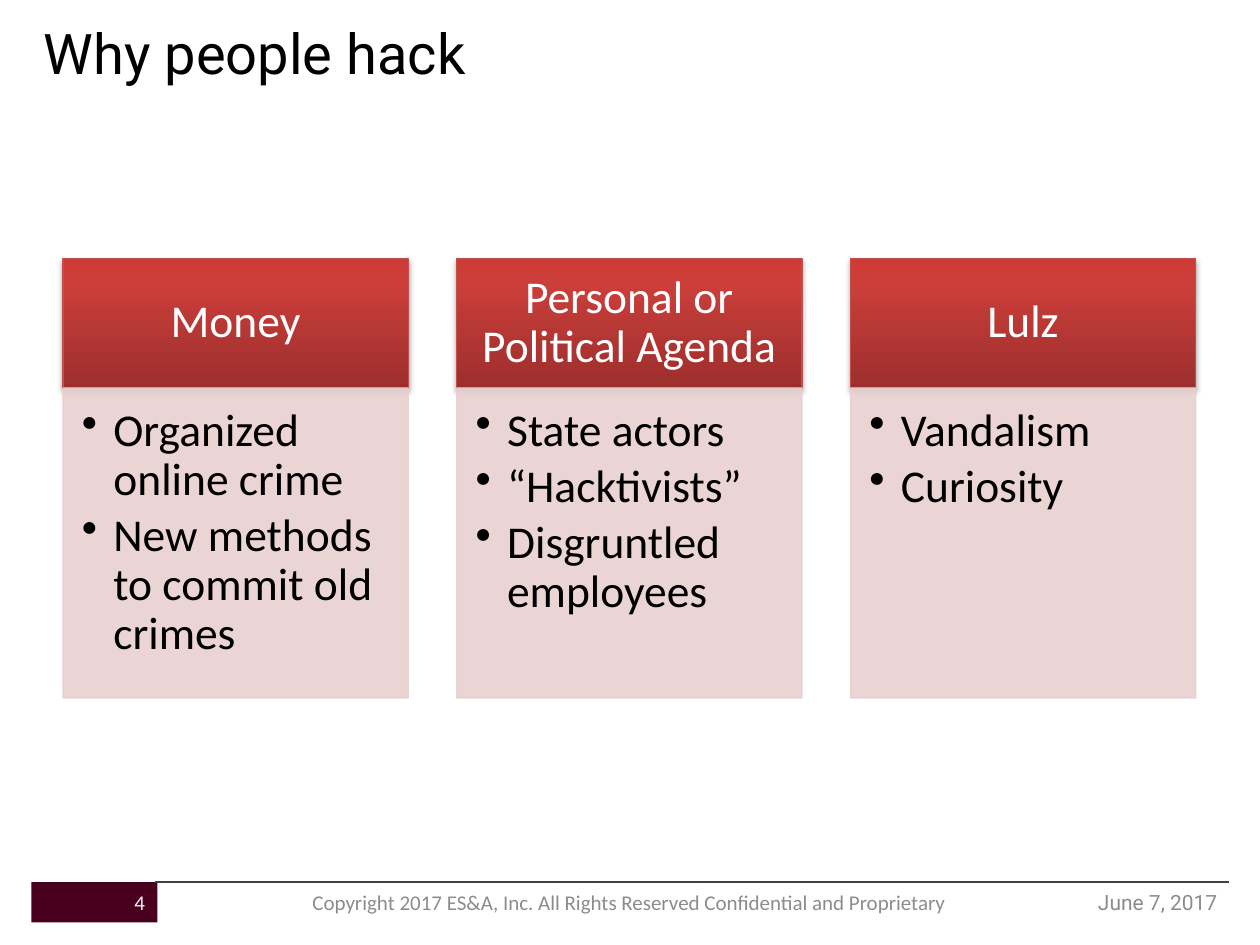
from dataclasses import dataclass
from typing import NamedTuple

from lxml.etree import SubElement
from pptx import Presentation
from pptx.dml.color import RGBColor
from pptx.enum.shapes import MSO_CONNECTOR, MSO_SHAPE
from pptx.enum.text import MSO_ANCHOR, PP_ALIGN
from pptx.oxml import parse_xml
from pptx.oxml.ns import nsdecls, qn
from pptx.util import Inches, Pt


@dataclass(frozen=True)
class Theme:
    heading_font: str = "Roboto"
    body_font: str = "Calibri"
    title_size: float = 32
    card_size: float = 26
    footer_size: float = 12
    black: str = "000000"
    white: str = "FFFFFF"
    grey: str = "8C8C8C"
    page_number: str = "F2F2F2"
    badge: str = "49001E"
    rule: str = "404040"
    header_edge: str = "C0504D"
    header_stops: tuple = ((0, "9C2F2D"), (80, "CB3E3A"), (100, "CE3B37"))
    panel: str = "E8D0D0"


class Box(NamedTuple):
    left: float
    top: float
    width: float
    height: float

    def lengths(self) -> list:
        return [Inches(value) for value in self]


class Motive(NamedTuple):
    heading: str
    examples: tuple


class Label(NamedTuple):
    text: str
    box: Box
    font: str
    size: float
    color: str
    align: PP_ALIGN
    anchor: MSO_ANCHOR


THEME = Theme()
SLIDE_WIDTH, SLIDE_HEIGHT = 10, 7.5

# Card grid
GRID_LEFT, GRID_TOP = 0.5, 2.05
CARD_WIDTH, COLUMN_STEP = 2.74, 3.125
HEADER_HEIGHT, PANEL_HEIGHT = 1.03, 2.46
HEADER_INSETS = (0.2, 0.12, 0.2, 0.12)
PANEL_INSETS = (0.15, 0.15, 0.2, 0.23)

# Footer band
FOOTER_TOP, FOOTER_HEIGHT = 7, 0.32
BADGE = Box(0.25, FOOTER_TOP, 1, FOOTER_HEIGHT)

MOTIVES = (
    Motive("Money", ("Organized online crime", "New methods to commit old crimes")),
    Motive("Personal or Political Agenda",
           ("State actors", "“Hacktivists”", "Disgruntled employees")),
    Motive("Lulz", ("Vandalism", "Curiosity")),
)
LABELS = (
    Label("Why people hack", Box(0.25, 0.1, 8, 1.2), THEME.heading_font,
          THEME.title_size, THEME.black, PP_ALIGN.LEFT, MSO_ANCHOR.TOP),
    Label("June 7, 2017", Box(7.67, FOOTER_TOP, 2.09, FOOTER_HEIGHT), THEME.heading_font,
          THEME.footer_size, THEME.grey, PP_ALIGN.RIGHT, MSO_ANCHOR.MIDDLE),
    Label("Copyright 2017 ES&A, Inc. All Rights Reserved Confidential and Proprietary",
          Box(2.33, FOOTER_TOP, 5.33, FOOTER_HEIGHT), THEME.body_font,
          THEME.footer_size, THEME.grey, PP_ALIGN.CENTER, MSO_ANCHOR.MIDDLE),
    Label("4", BADGE, THEME.body_font,
          THEME.footer_size, THEME.page_number, PP_ALIGN.RIGHT, MSO_ANCHOR.MIDDLE),
)


def add_run(paragraph, text: str, font: str, size: float, color: str) -> None:
    run = paragraph.add_run()
    run.text = text
    run.font.name = font
    run.font.size = Pt(size)
    run.font.color.rgb = RGBColor.from_string(color)


def add_label(slide, label: Label) -> None:
    frame = slide.shapes.add_textbox(*label.box.lengths()).text_frame
    frame.word_wrap = True
    frame.vertical_anchor = label.anchor
    paragraph = frame.paragraphs[0]
    paragraph.alignment = label.align
    add_run(paragraph, label.text, label.font, label.size, label.color)


def add_rectangle(slide, box: Box, fill: str, edge: str | None = None):
    shape = slide.shapes.add_shape(MSO_SHAPE.RECTANGLE, *box.lengths())
    shape.shadow.inherit = False
    shape.fill.solid()
    shape.fill.fore_color.rgb = RGBColor.from_string(fill)
    if edge is None:
        shape.line.fill.background()
    else:
        shape.line.color.rgb = RGBColor.from_string(edge)
        shape.line.width = Pt(0.75)
    return shape


def prepare_frame(shape, insets: tuple, anchor: MSO_ANCHOR):
    frame = shape.text_frame
    frame.word_wrap = True
    frame.vertical_anchor = anchor
    (frame.margin_left, frame.margin_top,
     frame.margin_right, frame.margin_bottom) = map(Inches, insets)
    return frame


def add_gradient_and_shadow(shape) -> None:
    stops = "".join(
        f'<a:gs pos="{share * 1000}"><a:srgbClr val="{color}"/></a:gs>'
        for share, color in THEME.header_stops)
    properties = shape.element.spPr
    properties.replace(properties.find(qn("a:solidFill")), parse_xml(
        f'<a:gradFill {nsdecls("a")} rotWithShape="1"><a:gsLst>{stops}</a:gsLst>'
        '<a:lin ang="16200000" scaled="0"/></a:gradFill>'))
    properties.find(qn("a:effectLst")).append(parse_xml(
        f'<a:outerShdw {nsdecls("a")} blurRad="{Pt(3.1)}" dist="{Pt(1.8)}" '
        'dir="5400000" rotWithShape="0"><a:srgbClr val="000000">'
        '<a:alpha val="35000"/></a:srgbClr></a:outerShdw>'))


def add_bullet(paragraph) -> None:
    properties = paragraph._p.get_or_add_pPr()
    properties.set("marL", str(Inches(0.25)))
    properties.set("indent", str(-Inches(0.25)))
    SubElement(properties, qn("a:buChar")).set("char", "•")


def add_card(slide, column: int, motive: Motive) -> None:
    left = GRID_LEFT + column * COLUMN_STEP

    # Heading block
    header = add_rectangle(slide, Box(left, GRID_TOP, CARD_WIDTH, HEADER_HEIGHT),
                           THEME.header_edge, THEME.header_edge)
    add_gradient_and_shadow(header)
    heading = prepare_frame(header, HEADER_INSETS, MSO_ANCHOR.MIDDLE).paragraphs[0]
    heading.alignment = PP_ALIGN.CENTER
    heading.line_spacing = 0.9
    add_run(heading, motive.heading, THEME.body_font, THEME.card_size, THEME.white)

    # Translucent panel with bullets
    panel = add_rectangle(
        slide, Box(left, GRID_TOP + HEADER_HEIGHT, CARD_WIDTH, PANEL_HEIGHT),
        THEME.panel, THEME.panel)
    for color in panel.element.spPr.iter(qn("a:srgbClr")):
        SubElement(color, qn("a:alpha")).set("val", "90000")
    frame = prepare_frame(panel, PANEL_INSETS, MSO_ANCHOR.TOP)
    for index, example in enumerate(motive.examples):
        bullet = frame.add_paragraph() if index else frame.paragraphs[0]
        add_bullet(bullet)
        bullet.alignment = PP_ALIGN.LEFT
        bullet.line_spacing = 0.9
        bullet.space_after = Pt(0.15 * THEME.card_size)
        add_run(bullet, example, THEME.body_font, THEME.card_size, THEME.black)


def add_footer_band(slide) -> None:
    add_rectangle(slide, BADGE, THEME.badge)
    rule = slide.shapes.add_connector(
        MSO_CONNECTOR.STRAIGHT, Inches(1.23), Inches(FOOTER_TOP),
        Inches(9.75), Inches(FOOTER_TOP))
    rule.line.color.rgb = RGBColor.from_string(THEME.rule)
    rule.line.width = Pt(0.75)
    SubElement(rule.element.spPr, qn("a:effectLst"))


def main() -> None:
    deck = Presentation()
    deck.slide_width, deck.slide_height = Inches(SLIDE_WIDTH), Inches(SLIDE_HEIGHT)
    slide = deck.slides.add_slide(deck.slide_layouts[6])
    add_footer_band(slide)
    for column, motive in enumerate(MOTIVES):
        add_card(slide, column, motive)
    for label in LABELS:
        add_label(slide, label)
    deck.save("out.pptx")


if __name__ == "__main__":
    main()
